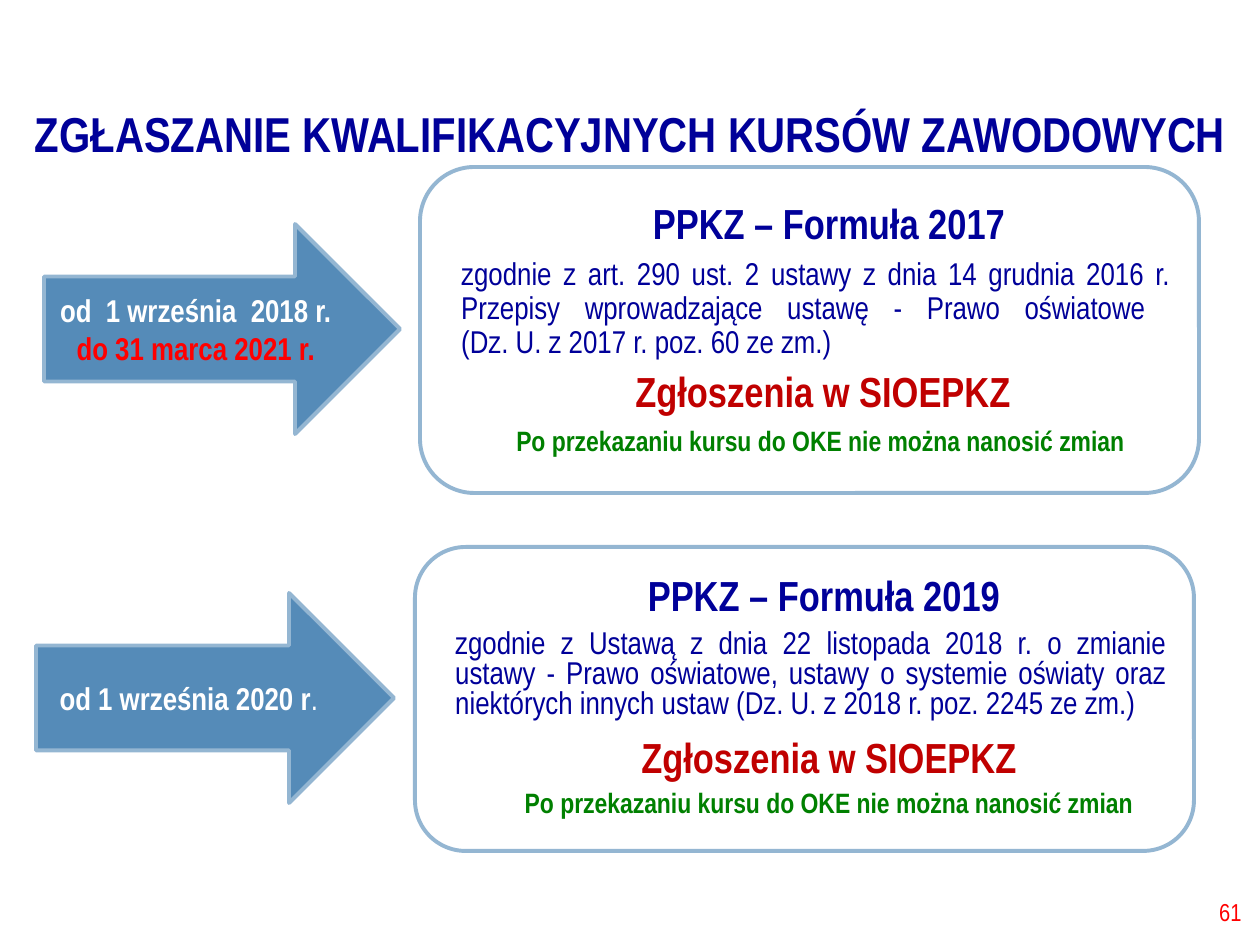
from dataclasses import dataclass

from pptx import Presentation
from pptx.dml.color import RGBColor
from pptx.enum.shapes import MSO_SHAPE
from pptx.enum.text import MSO_ANCHOR, MSO_AUTO_SIZE, PP_ALIGN
from pptx.util import Emu, Pt

PX = 914400 / 126
NAVY, RED, CRIMSON, GREEN = "000099", "FF0000", "C00000", "008000"
WHITE, STEEL, SKY = "FFFFFF", "558BB8", "94B6D2"
FORMS = "Zgłoszenia w SIOEPKZ"
WARNING = "Po przekazaniu kursu do OKE nie można nanosić zmian"


@dataclass
class Run:
    text: str
    size: int
    color: str
    bold: bool = True


@dataclass
class Para:
    runs: list[Run]
    align: PP_ALIGN = PP_ALIGN.CENTER
    spacing: float = 1.0
    before: int = 0
    margin: int = 0


@dataclass
class Block:
    kind: MSO_SHAPE
    box: tuple[int, int, int, int]
    fill: str
    paras: list[Para]


def px(n: int) -> Emu:
    return Emu(round(n * PX))


def rgb(color: str) -> RGBColor:
    return RGBColor.from_string(color)


def write(sp, paras: list[Para]) -> None:
    tf = sp.text_frame
    frame_format = {"word_wrap": True, "auto_size": MSO_AUTO_SIZE.NONE,
                    "vertical_anchor": MSO_ANCHOR.MIDDLE}
    for name, value in frame_format.items():
        setattr(tf, name, value)
    for i, para in enumerate(paras):
        p = tf.paragraphs[0] if i == 0 else tf.add_paragraph()
        para_format = {"alignment": para.align, "line_spacing": para.spacing,
                       "space_before": Pt(para.before if i else 0)}
        for name, value in para_format.items():
            setattr(p, name, value)
        p._p.get_or_add_pPr().set("marL", str(px(para.margin)))
        for run in para.runs:
            add_run(p, run)


def add_run(p, run: Run) -> None:
    """Add the run's text, with a line break at each newline."""
    for i, line in enumerate(run.text.split("\n")):
        if i:
            p.add_line_break()
        r = p.add_run()
        r.text = line
        font_format = {"name": "Arial Narrow", "size": Pt(run.size), "bold": run.bold}
        for name, value in font_format.items():
            setattr(r.font, name, value)
        r.font.color.rgb = rgb(run.color)


def add_block(slide, block: Block) -> None:
    sp = slide.shapes.add_shape(block.kind, *map(px, block.box))
    sp.shadow.inherit = False
    sp.fill.solid()
    sp.fill.fore_color.rgb = rgb(block.fill)
    sp.line.color.rgb = rgb(SKY)
    sp.line.width = Pt(2.25)
    write(sp, block.paras)


def panel(box: tuple[int, int, int, int], heading: str, law: str, spacing: float,
          forms_spacing: float, margins: tuple[int, int]) -> Block:
    """Describe a rounded panel; margins shift its two closing lines."""
    forms_margin, warning_margin = margins
    return Block(MSO_SHAPE.ROUNDED_RECTANGLE, box, WHITE, [
        Para([Run(heading, 24, NAVY)], spacing=spacing, margin=39),
        Para([Run(law, 18, NAVY, False)], PP_ALIGN.JUSTIFY, spacing, 6, 13),
        Para([Run(FORMS, 24, CRIMSON)], spacing=forms_spacing, before=6, margin=forms_margin),
        Para([Run(WARNING, 16, GREEN)], spacing=spacing, before=6, margin=warning_margin),
    ])


def arrow(box: tuple[int, int, int, int], paras: list[Para]) -> Block:
    return Block(MSO_SHAPE.RIGHT_ARROW, box, STEEL, paras)


BLOCKS = [
    panel((420, 167, 779, 326), "PPKZ – Formuła 2017",
          "zgodnie z art. 290 ust. 2 ustawy z dnia 14 grudnia 2016 r. Przepisy "
          "wprowadzające ustawę - Prawo oświatowe \n(Dz. U. z 2017 r. poz. 60 ze zm.)",
          0.9, 0.9, (27, 22)),
    arrow((44, 224, 356, 210), [Para([Run("od  1 września  2018 r.", 18, WHITE)]),
                                Para([Run("do 31 marca 2021 r.", 18, RED)])]),
    panel((415, 547, 779, 304), "PPKZ – Formuła 2019",
          "zgodnie z Ustawą z dnia 22 listopada 2018 r. o zmianie ustawy - Prawo "
          "oświatowe, ustawy o systemie oświaty oraz niektórych innych ustaw "
          "(Dz. U. z 2018 r. poz. 2245 ze zm.)",
          0.8, 1.0, (49, 49)),
    arrow((36, 593, 358, 210), [Para([Run("od 1 września 2020 r", 18, WHITE),
                                      Run(".", 18, WHITE, False)])]),
]


def main() -> None:
    prs = Presentation()
    prs.slide_width, prs.slide_height = px(1260), px(945)
    slide = prs.slides.add_slide(prs.slide_layouts[5])

    title = slide.shapes.title
    title.left, title.top, title.width, title.height = map(px, (0, 99, 1260, 63))
    write(title, [Para([Run("ZGŁASZANIE KWALIFIKACYJNYCH KURSÓW ZAWODOWYCH", 28, NAVY)],
                       spacing=1.08)])

    number = slide.shapes.add_textbox(*map(px, (970, 887, 284, 50)))
    write(number, [Para([Run("61", 14, RED, False)], PP_ALIGN.RIGHT)])

    for block in BLOCKS:
        add_block(slide, block)
    prs.save("out.pptx")


if __name__ == "__main__":
    main()
